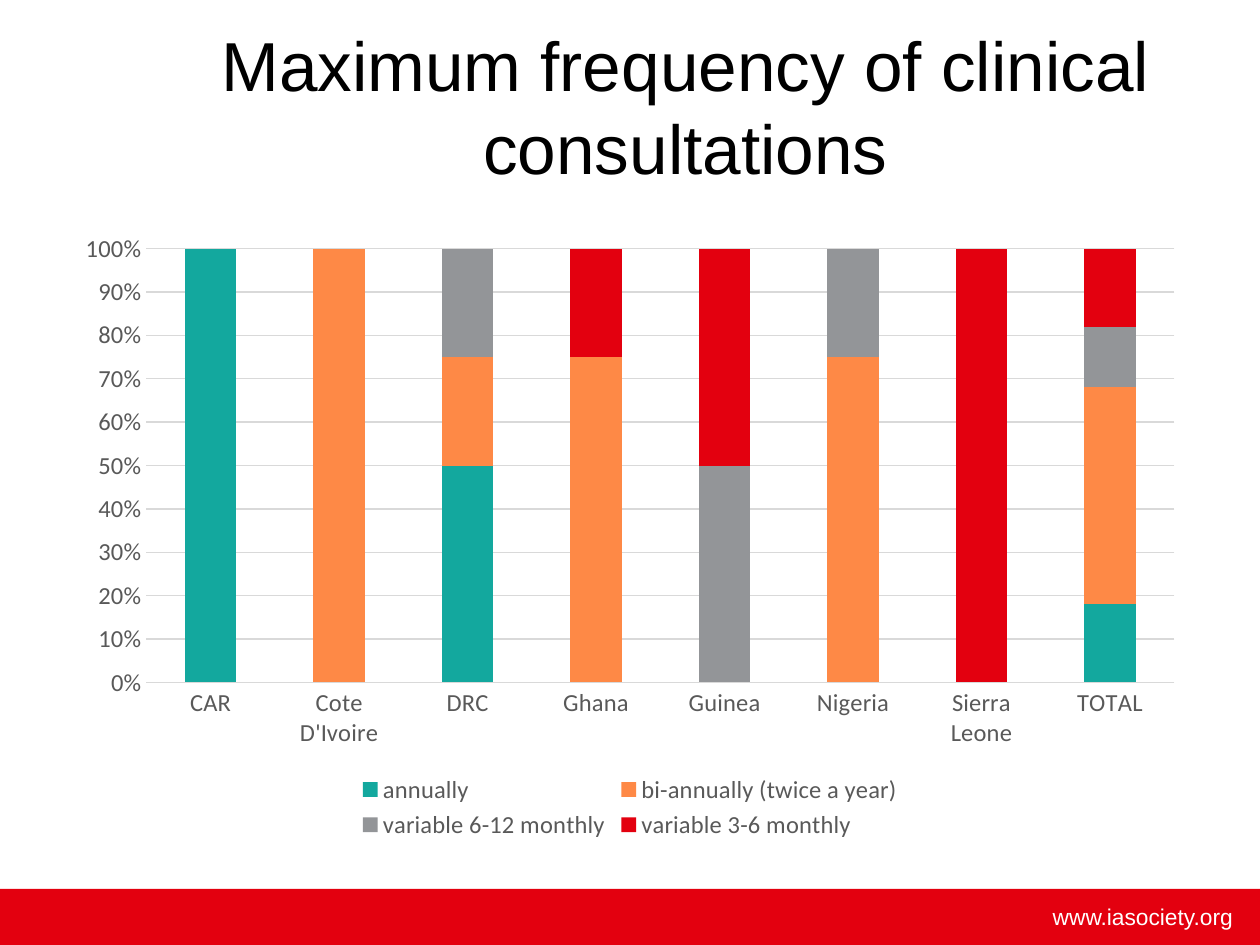
from pptx import Presentation
from pptx.chart.data import CategoryChartData
from pptx.dml.color import RGBColor
from pptx.enum.chart import XL_CHART_TYPE as ChartType, XL_LEGEND_POSITION as LegendPosition
from pptx.enum.chart import XL_TICK_MARK as TickMark
from pptx.enum.shapes import MSO_SHAPE as Shape
from pptx.enum.text import MSO_ANCHOR as Anchor, PP_ALIGN as Align
from pptx.util import Pt

PX = 914400 / 126
RED = "E3000F"
GRID = "D9D9D9"
LABEL = {"name": "Calibri", "size": Pt(14), "bold": False}
COUNTRIES = ["CAR", "Cote D'Ivoire", "DRC", "Ghana", "Guinea", "Nigeria", "Sierra Leone", "TOTAL"]
FREQUENCIES = [
    ("annually", "13A89E", [100, None, 50, None, None, None, None, 18]),
    ("bi-annually (twice a year)", "FE8946", [None, 100, 25, 75, None, 75, None, 50]),
    ("variable 6-12 monthly", "939598", [None, None, 25, None, 50, 25, None, 14]),
    ("variable 3-6 monthly", RED, [None, None, None, 25, 50, None, 100, 18]),
]


def emu(*lengths):
    """Turn px lengths into EMU."""
    return [round(length * PX) for length in lengths]


def paint(color_holder, color):
    """Give a fill a solid hex colour."""
    color_holder.solid()
    color_holder.fore_color.rgb = RGBColor.from_string(color)


def style(font, color, formats):
    """Set a font's colour and its format values."""
    font.color.rgb = RGBColor.from_string(color)
    for attribute, value in formats.items():
        setattr(font, attribute, value)


def add_text(slide, box, text, align, color, size):
    """Place one middle-anchored Arial paragraph in the box."""
    frame = slide.shapes.add_textbox(*emu(*box)).text_frame
    frame.word_wrap = True
    frame.vertical_anchor = Anchor.MIDDLE
    paragraph = frame.paragraphs[0]
    paragraph.alignment = align
    run = paragraph.add_run()
    run.text = text
    style(run.font, color, {"name": "Arial", "size": Pt(size)})


def add_footer(slide, left, top, width, height):
    """Draw the red band with the web address at its right."""
    band = slide.shapes.add_shape(Shape.RECTANGLE, *emu(left, top, width, height))
    band.shadow.inherit = False
    paint(band.fill, RED)
    band.line.fill.background()
    address_box = (left + width - 432, top + 7, 417, 40)
    add_text(slide, address_box, "www.iasociety.org", Align.RIGHT, "FFFFFF", 13)


def add_frequency_chart(slide, left, top, width, height):
    """Chart the share of each consultation frequency by country."""
    data = CategoryChartData()
    data.categories = COUNTRIES
    for name, _, shares in FREQUENCIES:
        data.add_series(name, shares)
    box = emu(left, top, width, height)
    chart = slide.shapes.add_chart(ChartType.COLUMN_STACKED_100, *box, data).chart
    chart.has_title = False
    style(chart.font, "000000", {"name": "Calibri", "size": Pt(10)})

    columns = chart.plots[0]
    columns.gap_width, columns.overlap = 150, 100
    columns.vary_by_categories = False
    for series, (_, color, _) in zip(columns.series, FREQUENCIES):
        paint(series.format.fill, color)

    countries, percent = chart.category_axis, chart.value_axis
    for axis in (countries, percent):
        axis.major_tick_mark = axis.minor_tick_mark = TickMark.NONE
        style(axis.tick_labels.font, "595959", LABEL)
    percent.tick_labels.number_format = "0%"
    percent.tick_labels.number_format_is_linked = False
    percent.format.line.fill.background()
    for line in (countries.format.line, percent.major_gridlines.format.line):
        paint(line.fill, GRID)
        line.width = Pt(0.75)

    chart.has_legend = True
    chart.legend.position = LegendPosition.BOTTOM
    chart.legend.include_in_layout = False
    style(chart.legend.font, "595959", LABEL)


def main():
    """Build and save the slide."""
    deck = Presentation()
    deck.slide_width, deck.slide_height = emu(1260, 945)
    slide = deck.slides.add_slide(deck.slide_layouts[6])
    add_footer(slide, 0, 889, 1260, 56)
    title = "Maximum frequency of clinical consultations"
    add_text(slide, (174, 27, 1023, 157), title, Align.CENTER, "000000", 39.6)
    add_frequency_chart(slide, 63, 221, 1134, 624)
    deck.save("out.pptx")


if __name__ == "__main__":
    main()
